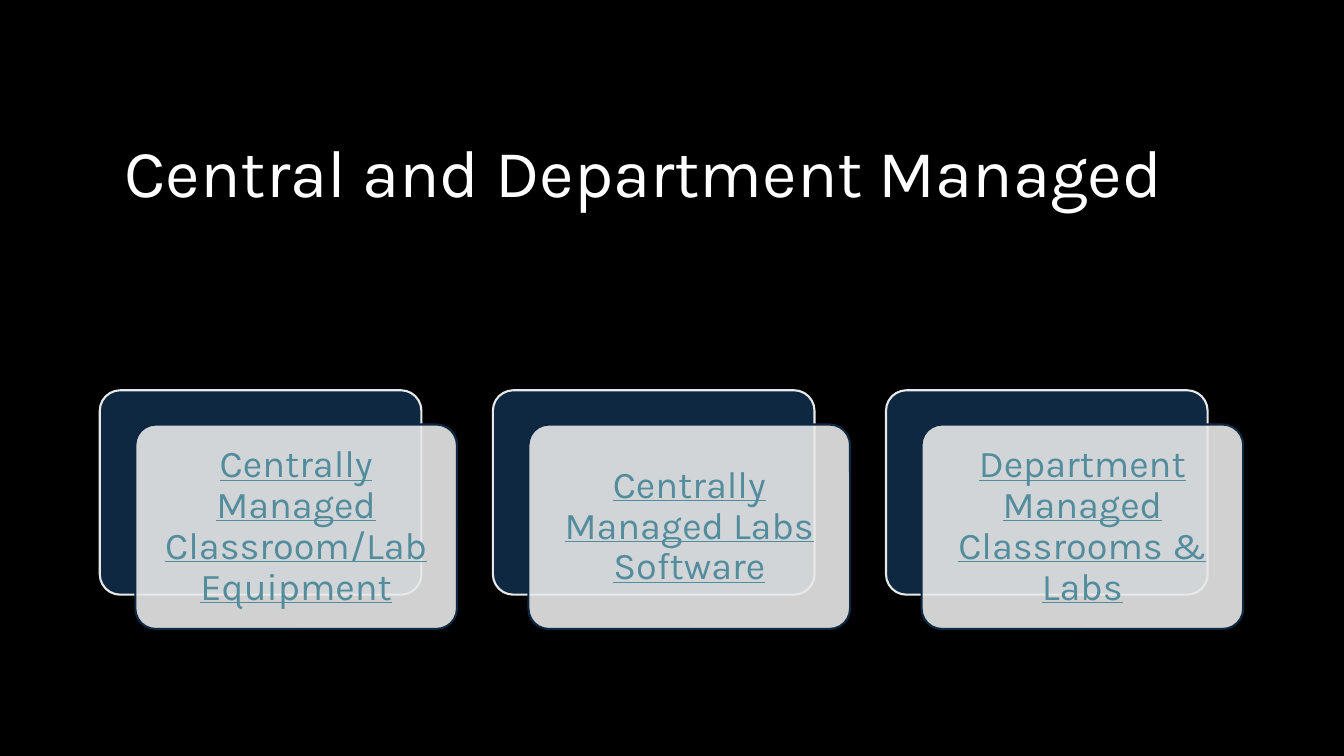
from lxml.etree import SubElement
from pptx import Presentation
from pptx.dml.color import RGBColor
from pptx.enum.shapes import MSO_SHAPE as Shape
from pptx.enum.text import MSO_ANCHOR as Anchor, PP_ALIGN as Align
from pptx.oxml.ns import qn
from pptx.util import Pt

COLORS = {
    "background": "000000",
    "title": "FFFFFF",
    "navy": "0E2841",
    "pale": "E8E8E8",
    "link": "538D9D",
}
FONT = "Karla"
TITLE = "Central and Department Managed"
CATEGORIES = [
    "Centrally Managed Classroom/Lab Equipment",
    "Centrally Managed Labs Software",
    "Department Managed Classrooms & Labs",
]
CARD_WIDTH, CARD_HEIGHT = 229.75, 146
CARD_SHIFT = 25.4, 24.5
CARD_INSET = 8


def color(name):
    return RGBColor.from_string(COLORS[name])


def write(frame, text, size, ink, align, underline=False):
    frame.word_wrap = True
    frame.vertical_anchor = Anchor.MIDDLE
    paragraph = frame.paragraphs[0]
    paragraph.alignment = align
    paragraph.line_spacing = 0.9
    run = paragraph.add_run()
    run.text = text
    run.font.name = FONT
    run.font.size = Pt(size)
    run.font.color.rgb = color(ink)
    run.font.underline = underline


def add_title(slide, left, top, width, height):
    title = slide.shapes.add_textbox(Pt(left), Pt(top), Pt(width), Pt(height))
    write(title.text_frame, TITLE, 48, "title", Align.LEFT)


def add_card(slide, left, top, fill, outline):
    card = slide.shapes.add_shape(Shape.ROUNDED_RECTANGLE, Pt(left), Pt(top),
                                  Pt(CARD_WIDTH), Pt(CARD_HEIGHT))
    card.adjustments[0] = 0.1
    card.shadow.inherit = False
    card.fill.solid()
    card.fill.fore_color.rgb = color(fill)
    card.line.color.rgb = color(outline)
    card.line.width = Pt(1.5)
    return card


def add_category(slide, left, top, label):
    """Place a navy card with a translucent labelled card shifted over it."""
    add_card(slide, left, top, "navy", "pale")
    front = add_card(slide, left + CARD_SHIFT[0], top + CARD_SHIFT[1], "pale", "navy")
    fill_color = front.fill._xPr.find(qn("a:solidFill"))[0]
    SubElement(fill_color, qn("a:alpha"), val="90000")
    frame = front.text_frame
    frame.margin_left = frame.margin_right = Pt(CARD_INSET)
    frame.margin_top = frame.margin_bottom = Pt(CARD_INSET)
    write(frame, label, 27, "link", Align.CENTER, underline=True)


def add_categories(slide, left, top, pitch):
    for column, label in enumerate(CATEGORIES):
        add_category(slide, left + column * pitch, top, label)


def main():
    deck = Presentation()
    deck.slide_width, deck.slide_height = Pt(960), Pt(540)
    slide = deck.slides.add_slide(deck.slide_layouts[6])
    slide.background.fill.solid()
    slide.background.fill.fore_color.rgb = color("background")
    add_title(slide, 82, 64, 801.5, 122.5)
    add_categories(slide, 71.25, 278.75, 280.8)
    deck.save("out.pptx")


if __name__ == "__main__":
    main()
